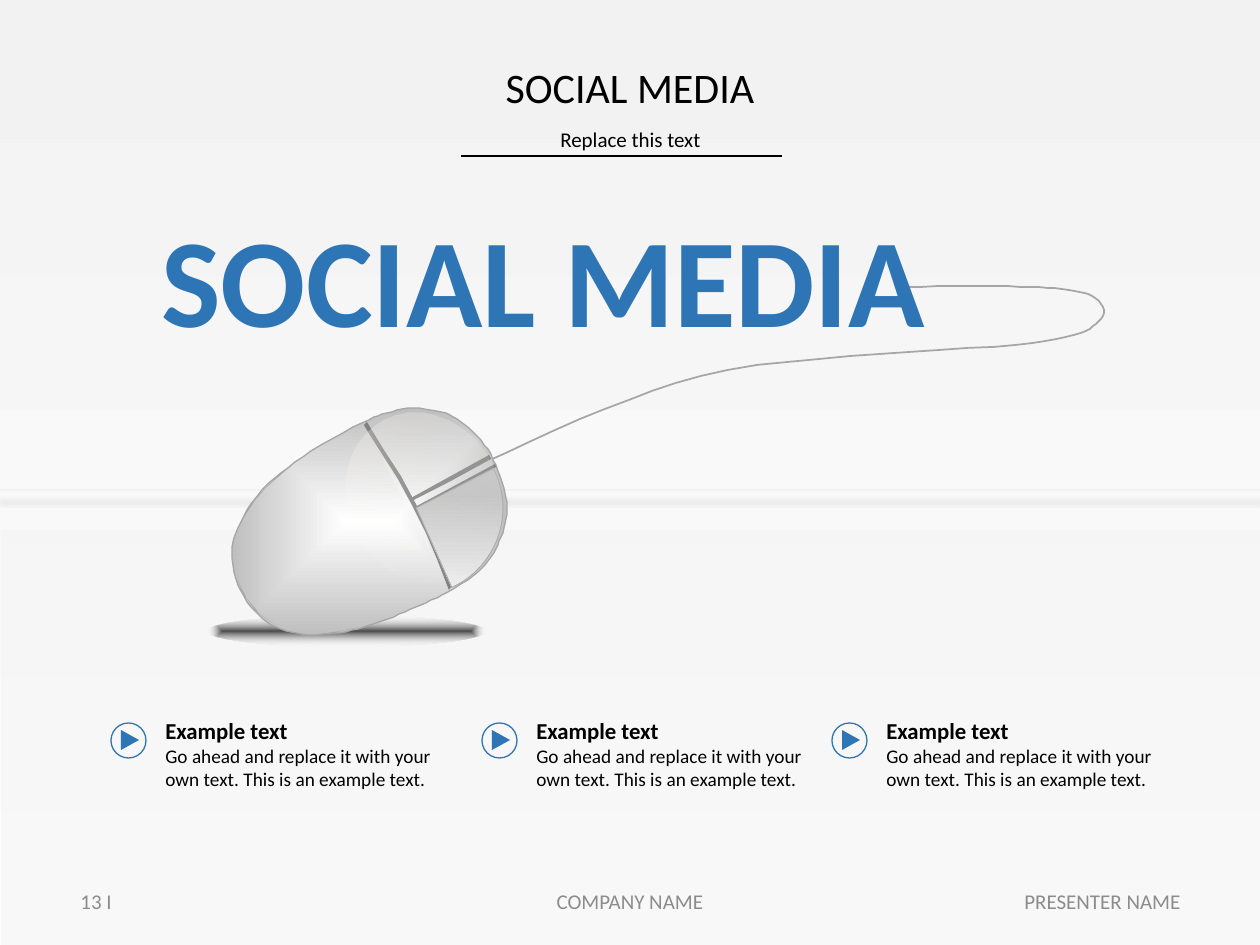
"""Build the social media slide with a computer mouse and three example texts."""
from pptx import Presentation
from pptx.dml.color import RGBColor
from pptx.enum.shapes import MSO_CONNECTOR, MSO_SHAPE
from pptx.enum.text import MSO_ANCHOR, PP_ALIGN
from pptx.oxml import parse_xml
from pptx.oxml.ns import nsdecls, qn
from pptx.util import Pt

PX = 914400 / 126
LEFT, CENTER, RIGHT = PP_ALIGN.LEFT, PP_ALIGN.CENTER, PP_ALIGN.RIGHT
TOP, MIDDLE = MSO_ANCHOR.TOP, MSO_ANCHOR.MIDDLE
RECT, OVAL, PIE = MSO_SHAPE.RECTANGLE, MSO_SHAPE.OVAL, MSO_SHAPE.PIE
TRIANGLE, STRAIGHT = MSO_SHAPE.ISOSCELES_TRIANGLE, MSO_CONNECTOR.STRAIGHT

BLACK = RGBColor(0x00, 0x00, 0x00)
INK = RGBColor(0x17, 0x17, 0x17)
WHITE = RGBColor(0xFF, 0xFF, 0xFF)
CREAM = RGBColor(0xFF, 0xFC, 0xF9)
PALE = RGBColor(0xF2, 0xF2, 0xF2)
SILVER = RGBColor(0xBF, 0xBF, 0xBF)
OUTLINE = RGBColor(0xA6, 0xA6, 0xA6)
EDGE = RGBColor(0xA2, 0xA4, 0xA6)
SEAM = RGBColor(0x80, 0x80, 0x80)
FOOTER = RGBColor(0x8C, 0x8C, 0x8C)
BLUE = RGBColor(0x2E, 0x75, 0xB6)

prs = Presentation()
prs.slide_width, prs.slide_height = round(1260 * PX), round(945 * PX)
slide = prs.slides.add_slide(prs.slide_layouts[6])
shapes = slide.shapes


def paint(shape, stops=(), angle=None, line=None, width=0.75):
    """Fill with (position, colour, opacity) stops; without an angle they radiate."""
    shape.shadow.inherit = False
    shape.fill.background()
    if line is None:
        shape.line.fill.background()
    else:
        shape.line.color.rgb = line
        shape.line.width = Pt(width)
    if not stops:
        return
    colours = [f'<a:srgbClr val="{colour}"><a:alpha val="{opacity * 1000}"/></a:srgbClr>'
               for _, colour, opacity in stops]
    if len(stops) == 1:
        xml = f'<a:solidFill {nsdecls("a")}>{colours[0]}</a:solidFill>'
    else:
        marks = "".join(f'<a:gs pos="{stop[0] * 1000}">{colour}</a:gs>'
                        for stop, colour in zip(stops, colours))
        if angle is None:
            course = ('<a:path path="rect"><a:fillToRect l="50000" t="50000" '
                      'r="50000" b="50000"/></a:path>')
        else:
            course = f'<a:lin ang="{angle * 60000}" scaled="0"/>'
        xml = (f'<a:gradFill {nsdecls("a")} rotWithShape="1"><a:gsLst>{marks}</a:gsLst>'
               f'{course}</a:gradFill>')
    properties = shape._element.spPr
    properties.replace(properties.find(qn("a:noFill")), parse_xml(xml))


def write(box, lines, align=LEFT, anchor=TOP):
    """Add a text box with one paragraph for each (text, size, colour, bold)."""
    frame = shapes.add_textbox(*[round(v * PX) for v in box]).text_frame
    frame.word_wrap = True
    frame.vertical_anchor = anchor
    frame.text = "\n".join(line[0] for line in lines)
    for paragraph, (_, size, colour, bold) in zip(frame.paragraphs, lines):
        paragraph.alignment = align
        font = paragraph.runs[0].font
        font.name, font.size, font.bold = "Calibri", Pt(size), bold
        font.color.rgb = colour


backdrop = [
    ((0, 0, 1260, 945), [(1, PALE, 100), (100, WHITE, 100)]),
    ((1, 530, 1259, 415), [(0, PALE, 49)]),
]
for box, stops in backdrop:
    paint(shapes.add_shape(RECT, *[round(v * PX) for v in box]), stops, 90)

horizon_shadow = ('<a:outerShdw blurRad="39370" dist="82550" dir="5400000" rotWithShape="0">'
                  '<a:srgbClr val="000000"><a:alpha val="16000"/></a:srgbClr></a:outerShdw>')
for start, end, y, colour, effect in [(0, 1260, 490, PALE, horizon_shadow),
                                      (461, 782, 156, BLACK, "")]:
    rule = shapes.add_connector(STRAIGHT, *[round(v * PX) for v in (start, y, end, y)])
    rule.line.color.rgb = colour
    rule.line.width = Pt(1)
    rule._element.spPr.append(
        parse_xml(f'<a:effectLst {nsdecls("a")}>{effect}</a:effectLst>'))

ground_shadow = shapes.add_shape(OVAL, *[round(v * PX) for v in (208, 616, 277, 30)])
paint(ground_shadow, [(0, INK, 76), (100, WHITE, 0)])

cord = [(898, 287), (970, 286), (1029, 287), (1068, 290), (1092, 296), (1104, 310),
        (1096, 324), (1074, 335), (1016, 345), (881, 354), (728, 370), (605, 409),
        (490, 460)]
body = [(442, 595), (416, 607), (388, 619), (358, 629), (329, 634), (301, 634),
        (276, 627), (255, 611), (238, 585), (232, 552), (238, 528), (255, 499),
        (275, 478), (311, 451), (362, 423), (387, 413), (413, 408), (441, 412),
        (461, 422), (481, 440), (496, 465), (505, 493), (507, 515), (501, 537),
        (491, 557), (473, 576)]
edge_left = [(291, 466), (280, 474), (258, 496), (242, 520), (249, 507), (266, 488), (286, 470)]
edge_bottom = [(275, 625), (260, 614), (247, 599), (238, 581), (244, 595), (255, 610)]
edge_right = [(359, 627), (340, 631), (321, 634), (333, 633)]
seam_across = [(367, 422), (384, 450), (401, 476), (416, 504), (440, 554), (447, 575),
               (451, 587), (449, 590), (437, 559), (426, 533), (412, 505), (398, 479),
               (370, 435), (364, 425)]
seam_upper = [(489, 455), (411, 498), (412, 501), (451, 481), (491, 459)]
seam_lower = [(495, 464), (415, 507), (417, 510), (456, 490), (496, 467)]
seam_gloss = [(381, 455), (402, 489), (421, 525), (438, 567), (410, 512)]

chrome = [(0, WHITE, 100), (100, SILVER, 100)]
outlines = [(cord, True, False, [], OUTLINE, 1), (body, True, True, chrome, OUTLINE, 0.75)]
outlines += [(edge, False, True, [(0, EDGE, 100)], None, 0)
             for edge in (edge_left, edge_bottom, edge_right)]
outlines += [(seam, False, True, [(0, SEAM, 100)], None, 0)
             for seam in (seam_across, seam_upper, seam_lower)]
outlines.append((seam_gloss, False, True, [(0, WHITE, 28)], None, 0))
for knots, curved, closed, stops, line, width in outlines:
    points = knots
    if curved:
        if closed:
            guides = [knots[-1], *knots, *knots[:2]]
        else:
            guides = [knots[0], *knots, knots[-1]]
        points = [guides[1]]
        for a, b, c, d in zip(guides, guides[1:], guides[2:], guides[3:]):
            for t in (0.2, 0.4, 0.6, 0.8, 1):
                points.append(tuple(
                    q + t * (r - p + t * (2 * p - 5 * q + 4 * r - s
                                          + t * (3 * q - 3 * r + s - p))) / 2
                    for p, q, r, s in zip(a, b, c, d)))
    builder = shapes.build_freeform(*points[0], scale=PX)
    builder.add_line_segments(points[1:], close=closed)
    paint(builder.convert_to_shape(), stops, None, line, width)

right_button = shapes.add_shape(PIE, *[round(v * PX) for v in (330, 421, 173, 174)])
right_button.adjustments[0], right_button.adjustments[1] = 199.68, 39.6
paint(right_button, [(42, SILVER, 100), (100, PALE, 100)], 90, OUTLINE, 0.5)
glare = shapes.add_shape(OVAL, *[round(v * PX) for v in (336, 422, 176, 152)])
glare.rotation = 63.6
paint(glare, [(0, CREAM, 30), (100, WHITE, 0)], 0)

write((120, 195, 847, 165), [("SOCIAL MEDIA", 72, BLUE, True)], CENTER)
write((87, 120, 1087, 35), [("Replace this text", 12, BLACK, False)], CENTER)
write((87, 55, 1086, 63), [("SOCIAL MEDIA", 24, BLACK, False)], CENTER, MIDDLE)
for text, left, width, align in [("PRESENTER NAME", 910, 283, RIGHT),
                                 ("COMPANY NAME", 417, 426, CENTER),
                                 ("13 I", 68, 283, LEFT)]:
    write((left, 876, width, 50), [(text, 12, FOOTER, False)], align, MIDDLE)

example = [
    ("Example text", 13, BLACK, True),
    ("Go ahead and replace it with your own text. This is an example text.", 11, BLACK, False),
]
for left in (111, 482, 832):
    write((left + 42, 711, 305, 125), example)
    ring = shapes.add_shape(OVAL, *[round(v * PX) for v in (left, 723, 35, 35)])
    paint(ring, line=BLUE)
    play = shapes.add_shape(TRIANGLE, *[round(v * PX) for v in (left + 9, 731, 20, 18)])
    play.rotation = 90
    paint(play, [(0, BLUE, 100)])

prs.save("out.pptx")
